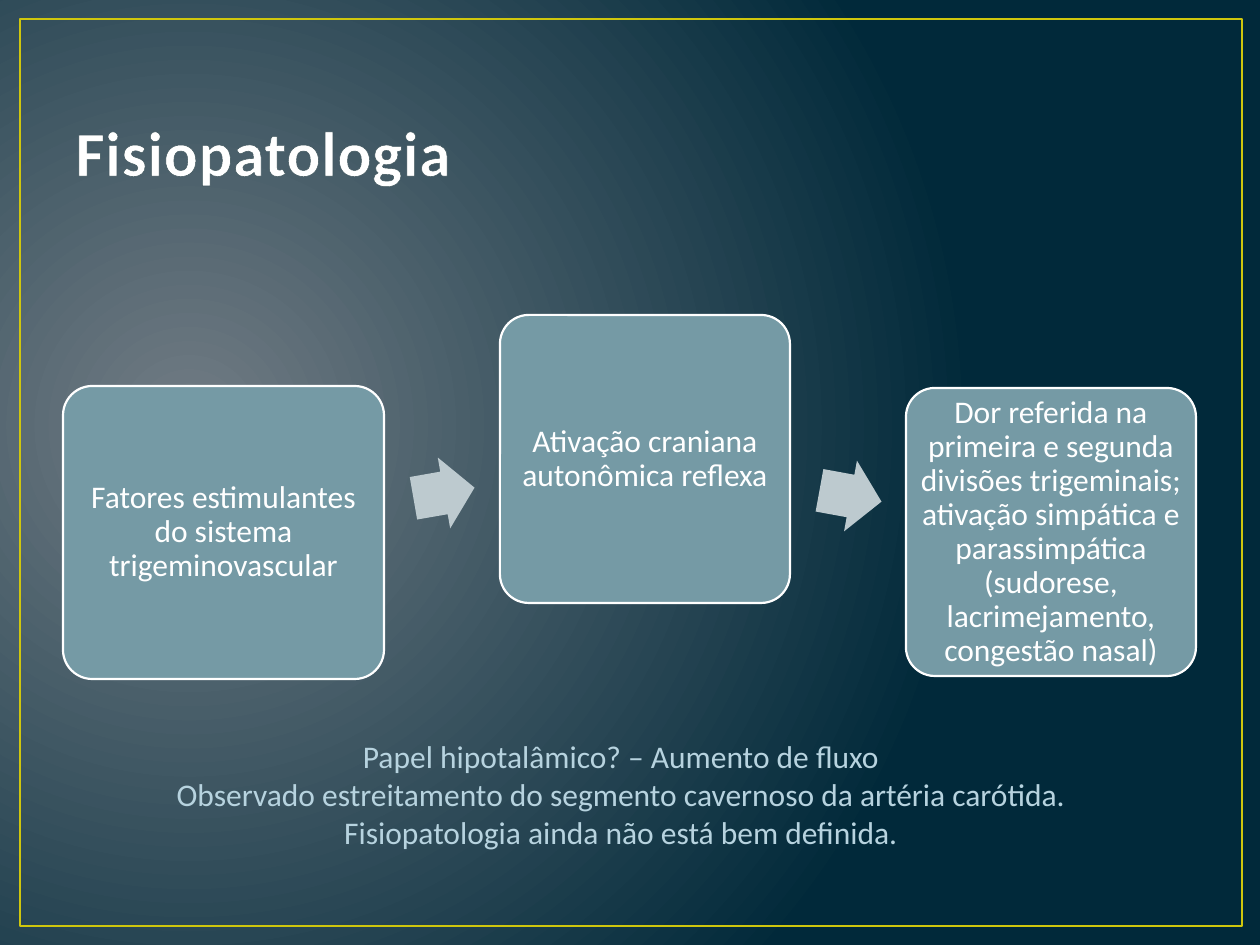
from lxml import etree
from pptx import Presentation
from pptx.dml.color import RGBColor
from pptx.enum.shapes import MSO_SHAPE
from pptx.enum.text import MSO_ANCHOR, PP_ALIGN
from pptx.oxml.ns import qn
from pptx.util import Pt

ROUNDED, ARROW, FRAME = MSO_SHAPE.ROUNDED_RECTANGLE, MSO_SHAPE.RIGHT_ARROW, MSO_SHAPE.RECTANGLE
LEFT, CENTER = PP_ALIGN.LEFT, PP_ALIGN.CENTER
TOP, MIDDLE, BOTTOM = MSO_ANCHOR.TOP, MSO_ANCHOR.MIDDLE, MSO_ANCHOR.BOTTOM

THEME = {
    "font": "Calibri", "title_size": 36, "text_size": 18,
    "glow": "717C84", "night": "01293A", "frame": "CFC60D",
    "white": "FFFFFF", "title_edge": "384F55",
    "step": "759AA5", "arrow": "BDCACF", "remark": "B7D3DF",
}

TITLE = "Fisiopatologia"
STEPS = [
    ("Fatores estimulantes do sistema trigeminovascular", (63, 386, 321, 293)),
    ("Ativação craniana autonômica reflexa", (500, 315, 290, 288)),
    ("Dor referida na primeira e segunda divisões trigeminais; ativação simpática e "
     "parassimpática (sudorese, lacrimejamento, congestão nasal)", (906, 388, 290, 288)),
]
ARROWS = [((413, 457, 62, 72), -9.9), ((819, 460, 63, 72), 10.3)]
REMARKS = [
    "Papel hipotalâmico? – Aumento de fluxo",
    "Observado estreitamento do segmento cavernoso da artéria carótida.",
    "Fisiopatologia ainda não está bem definida.",
]
FRAME_BOX = (20, 19, 1222, 907)
TITLE_BOX = (63, 38, 1134, 157)
REMARKS_BOX = (115, 731, 1012, 165)


def px(length):
    return round(length * 914400 / 126)


def color(name):
    return RGBColor.from_string(THEME[name])


def paint_background(slide):
    fill = slide.background.fill
    fill.gradient()
    for stop, name in zip(fill.gradient_stops, ("glow", "night")):
        stop.color.rgb = color(name)
    gradient = slide.background._cSld.find(".//" + qn("a:gradFill"))
    gradient.remove(gradient.find(qn("a:lin")))
    circle = etree.Element(qn("a:path"), path="circle")
    etree.SubElement(circle, qn("a:fillToRect"), l="15000", t="50000", r="85000", b="60000")
    gradient.find(qn("a:gsLst")).addnext(circle)


def add_shape(slide, kind, box, fill=None, line=None, width=0):
    shape = slide.shapes.add_shape(kind, *map(px, box))
    shape.shadow.inherit = False
    if fill:
        shape.fill.solid()
        shape.fill.fore_color.rgb = color(fill)
    else:
        shape.fill.background()
    if line:
        shape.line.color.rgb = color(line)
        shape.line.width = Pt(width)
    else:
        shape.line.fill.background()
    return shape


def write(frame, lines, name, size, align, anchor, spacing=1.0, bold=False):
    frame.word_wrap = True
    frame.vertical_anchor = anchor
    frame.text = "\n".join(lines)
    for paragraph in frame.paragraphs:
        paragraph.alignment = align
        paragraph.line_spacing = spacing
        font = paragraph.font
        font.name, font.size, font.bold = THEME["font"], Pt(THEME[size]), bold
        font.color.rgb = color(name)


def add_title(slide):
    title = slide.shapes.title
    title.left, title.top, title.width, title.height = map(px, TITLE_BOX)
    write(title.text_frame, [TITLE], "white", "title_size", LEFT, BOTTOM, bold=True)
    properties = title.text_frame.paragraphs[0].runs[0].font._element
    properties.set("spc", "50")
    edge = etree.Element(qn("a:ln"), w=str(Pt(1.05)))
    solid = etree.SubElement(edge, qn("a:solidFill"))
    etree.SubElement(solid, qn("a:srgbClr"), val=THEME["title_edge"])
    properties.insert(0, edge)


def add_step(slide, label, box):
    step = add_shape(slide, ROUNDED, box, "step", "white", 1.25)
    step.adjustments[0] = 0.1
    frame = step.text_frame
    frame.margin_left = frame.margin_right = frame.margin_top = frame.margin_bottom = 0
    write(frame, [label], "white", "text_size", CENTER, MIDDLE, 0.9)


def add_arrow(slide, box, angle):
    arrow = add_shape(slide, ARROW, box, "arrow")
    arrow.adjustments[0], arrow.adjustments[1] = 0.6, 0.5
    arrow.rotation = angle


def main():
    deck = Presentation()
    deck.slide_width, deck.slide_height = px(1260), px(945)
    slide = deck.slides.add_slide(deck.slide_layouts[5])
    paint_background(slide)
    add_shape(slide, FRAME, FRAME_BOX, line="frame", width=1.5)
    add_title(slide)
    for label, box in STEPS:
        add_step(slide, label, box)
    for box, angle in ARROWS:
        add_arrow(slide, box, angle)
    remarks = slide.shapes.add_textbox(*map(px, REMARKS_BOX))
    write(remarks.text_frame, REMARKS, "remark", "text_size", CENTER, TOP)
    deck.save("out.pptx")


if __name__ == "__main__":
    main()
